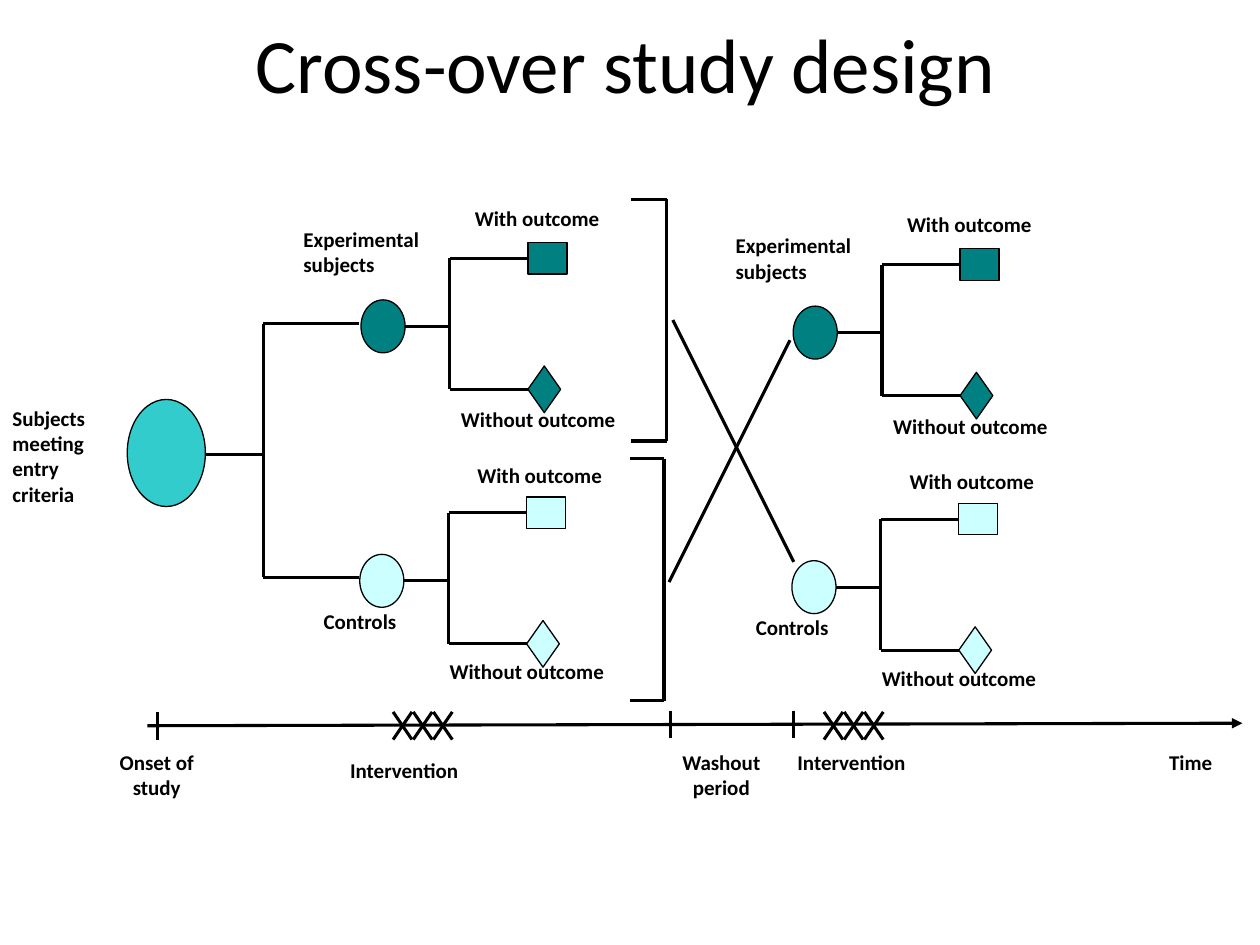
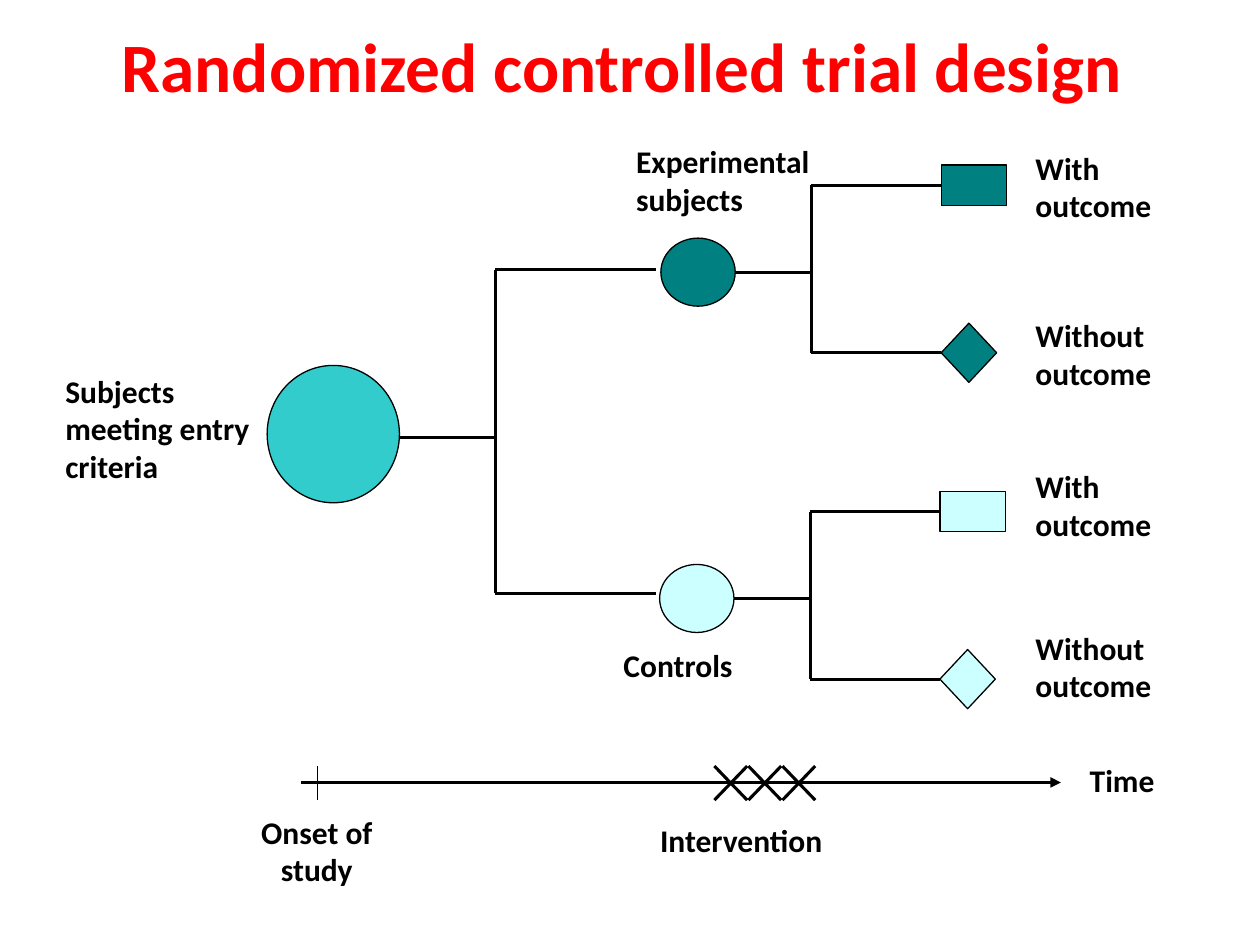
from dataclasses import dataclass

from lxml import etree
from pptx import Presentation
from pptx.dml.color import RGBColor
from pptx.enum.shapes import MSO_CONNECTOR, MSO_SHAPE
from pptx.enum.text import MSO_ANCHOR, MSO_AUTO_SIZE, PP_ALIGN
from pptx.oxml.ns import qn
from pptx.util import Inches, Pt


@dataclass(frozen=True)
class Theme:
    font: str = "Calibri"
    black: str = "000000"
    red: str = "FF0000"
    entry: str = "33CCCC"
    experimental: str = "008080"
    control: str = "CCFFFF"
    outline: float = 0.75
    rule: float = 1.75


THEME = Theme()

# Lengths are inches. Labels are (text, left, top, width, height).
# An arm is (fill, node centre x, node centre y).
CROSSOVER = {
    "title": ("Cross-over study design", (0.59, -0.17, 8.75, 1.33),
              dict(size=44)),
    "size": 12,
    "entry": (1.01, 3.17, 0.62, 0.85),
    "entry_fork": (2.09, 2.85, 3.61, (2.57, 4.58)),
    "arms": [(THEME.experimental, 3.04, 2.59), (THEME.control, 3.03, 4.61)],
    "arm_labels": [
        ("Experimental subjects", 2.31, 1.75, 1.37, 0.71),
        ("With outcome", 3.67, 1.58, 1.59, 0.44),
        ("Without outcome", 3.56, 3.18, 1.78, 0.48),
        ("Controls", 2.47, 4.78, 1.09, 0.71),
        ("With outcome", 3.69, 3.62, 1.52, 0.37),
        ("Without outcome", 3.47, 5.18, 1.73, 0.63),
    ],
    "phases": [(0, 0), (3.43, 0.05)],
    "node": (0.35, 0.42), "square": (0.31, 0.25), "diamond": (0.26, 0.37),
    "fork_dx": 0.53, "tip_dx": 1.15, "rise": 0.54, "drop": 0.5,
    "time_axis": (1.17, 5.76, 9.86, 5.74),
    "ticks": [(1.25, 5.65, THEME.rule), (5.32, 5.64, THEME.rule),
              (6.3, 5.64, THEME.rule)],
    "tick_height": 0.22,
    "interventions": [3.12, 6.54],
    "cross": (5.65, 0.15, 0.22, 0.16),
    "labels": [
        ("Subjects meeting entry criteria", 0, 3.17, 1.01, 1.07),
        ("Time", 9.18, 5.9, 0.82, 0.32),
        ("Intervention", 2.68, 5.96, 1.31, 0.43),
        ("Intervention", 6.23, 5.9, 1.31, 0.43),
    ],
    "centred_labels": [
        ("Onset of study", 0.78, 5.9, 0.93, 0.64),
        ("Washout\nperiod", 5.07, 5.9, 1.31, 0.64),
    ],
    "brackets": [(5.01, 5.29, 1.58, 3.5), (5, 5.27, 3.64, 5.56)],
    "swaps": [(5.34, 2.54, 6.3, 4.46), (5.31, 4.62, 6.27, 2.7)],
}

RANDOMIZED = {
    "title": ("Randomized controlled trial design ", (0.5, 0.13, 9, 0.77),
              dict(size=39.6, color=THEME.red, bold=True)),
    "size": 18,
    "entry": (2.12, 2.9, 1.05, 1.09),
    "entry_fork": (3.93, 5.21, 3.47, (2.14, 4.71)),
    "arms": [(THEME.experimental, 5.54, 2.16), (THEME.control, 5.53, 4.75)],
    "arm_labels": [
        ("Experimental subjects", 4.95, 1.08, 1.9, 0.91),
        ("With outcome", 8.12, 1.13, 1.4, 0.91),
        ("Without outcome", 8.12, 2.46, 1.53, 0.81),
        ("Controls", 4.85, 5.08, 1.84, 0.91),
        ("With outcome", 8.12, 3.66, 1.4, 0.91),
        ("Without outcome", 8.12, 4.94, 1.53, 0.81),
    ],
    "phases": [(0, 0)],
    "node": (0.59, 0.54), "square": (0.52, 0.32), "diamond": (0.44, 0.47),
    "fork_dx": 0.9, "tip_dx": 1.93, "rise": 0.69, "drop": 0.64,
    "time_axis": (2.39, 6.21, 8.42, 6.21),
    "ticks": [(2.52, 6.08, THEME.outline)],
    "tick_height": 0.27,
    "interventions": [5.67],
    "cross": (6.08, 0.26, 0.27, 0.27),
    "labels": [
        ("Subjects meeting entry criteria", 0.42, 2.9, 1.7, 1.36),
        ("Time", 8.55, 5.99, 1.05, 0.41),
        ("Intervention", 5.14, 6.47, 1.84, 0.55),
    ],
    "centred_labels": [("Onset of study", 1.73, 6.4, 1.57, 0.82)],
    "brackets": [],
    "swaps": [],
}


def write(tf, text, size, color=THEME.black, bold=False, align=PP_ALIGN.LEFT):
    tf.word_wrap = True
    tf.auto_size = MSO_AUTO_SIZE.NONE
    for i, content in enumerate(text.split("\n")):
        p = tf.paragraphs[0] if i == 0 else tf.add_paragraph()
        p.alignment = align
        r = p.add_run()
        r.text = content
        r.font.name = THEME.font
        r.font.size = Pt(size)
        r.font.bold = bold
        r.font.color.rgb = RGBColor.from_string(color)


def add_title(slide, text, box, style):
    sp = slide.shapes.title
    sp.left, sp.top, sp.width, sp.height = map(Inches, box)
    sp.text_frame.vertical_anchor = MSO_ANCHOR.MIDDLE
    write(sp.text_frame, text, align=PP_ALIGN.CENTER, **style)


def add_label(slide, label, size, align=PP_ALIGN.LEFT, dx=0, dy=0):
    text, x, y, w, h = label
    sp = slide.shapes.add_textbox(*map(Inches, (x + dx, y + dy, w, h)))
    write(sp.text_frame, text, size=size, bold=True, align=align)


def add_mark(slide, kind, x, y, w, h, fill):
    sp = slide.shapes.add_shape(kind, *map(Inches, (x, y, w, h)))
    sp.shadow.inherit = False
    sp.fill.solid()
    sp.fill.fore_color.rgb = RGBColor.from_string(fill)
    sp.line.color.rgb = RGBColor.from_string(THEME.black)
    sp.line.width = Pt(THEME.outline)
    return sp


def add_line(slide, x1, y1, x2, y2, width=THEME.rule, arrow=False):
    line = slide.shapes.add_connector(
        MSO_CONNECTOR.STRAIGHT, *map(Inches, (x1, y1, x2, y2)))
    line.line.color.rgb = RGBColor.from_string(THEME.black)
    line.line.width = Pt(width)
    if arrow:
        etree.SubElement(line.line._get_or_add_ln(), qn("a:tailEnd"),
                         type="triangle")
    etree.SubElement(line._element.spPr, qn("a:effectLst"))
    return line


def add_fork(slide, start_x, y, fork_x, tip_x, tip_ys):
    """Draw a stem, an upright and two branches; return the branches."""
    add_line(slide, start_x, y, fork_x, y)
    add_line(slide, fork_x, tip_ys[0], fork_x, tip_ys[1])
    return [add_line(slide, fork_x, tip_y, tip_x, tip_y) for tip_y in tip_ys]


def add_arm(slide, d, fill, cx, cy):
    """Draw one study group and its two outcomes around its node centre."""
    w, h = d["node"]
    add_mark(slide, MSO_SHAPE.OVAL, cx - w / 2, cy - h / 2, w, h, fill)
    tip_x = cx + d["tip_dx"]
    tip_ys = (cy - d["rise"], cy + d["drop"])
    branches = add_fork(slide, cx + w / 2, cy, cx + d["fork_dx"], tip_x, tip_ys)
    outcomes = ((MSO_SHAPE.RECTANGLE, d["square"]),
                (MSO_SHAPE.DIAMOND, d["diamond"]))
    for branch, y, (kind, (ow, oh)) in zip(branches, tip_ys, outcomes):
        outcome = add_mark(slide, kind, tip_x, y - oh / 2, ow, oh, fill)
        branch.end_connect(outcome, 1)


def add_timeline(slide, d):
    add_line(slide, *d["time_axis"], arrow=True)
    for x, y, width in d["ticks"]:
        add_line(slide, x, y, x, y + d["tick_height"], width=width)
    top, w, h, pitch = d["cross"]
    for start in d["interventions"]:
        for i in range(3):
            x = start + i * pitch
            add_line(slide, x, top, x + w, top + h)
            add_line(slide, x, top + h, x + w, top)


def add_bracket(slide, left, right, top, bottom):
    add_line(slide, right, top, right, bottom)
    for y in (top, bottom):
        add_line(slide, left, y, right, y)


def add_design(prs, d):
    slide = prs.slides.add_slide(prs.slide_layouts[5])
    add_title(slide, *d["title"])
    x, y, w, h = d["entry"]
    add_mark(slide, MSO_SHAPE.OVAL, x, y, w, h, THEME.entry)
    fork_x, tip_x, stem_y, tip_ys = d["entry_fork"]
    add_fork(slide, x + w, stem_y, fork_x, tip_x, tip_ys)
    for dx, dy in d["phases"]:
        for fill, cx, cy in d["arms"]:
            add_arm(slide, d, fill, cx + dx, cy + dy)
        for label in d["arm_labels"]:
            add_label(slide, label, d["size"], dx=dx, dy=dy)
    for bracket in d["brackets"]:
        add_bracket(slide, *bracket)
    for swap in d["swaps"]:
        add_line(slide, *swap)
    add_timeline(slide, d)
    for label in d["labels"]:
        add_label(slide, label, d["size"])
    for label in d["centred_labels"]:
        add_label(slide, label, d["size"], align=PP_ALIGN.CENTER)


def main():
    prs = Presentation()
    prs.slide_width, prs.slide_height = Inches(10), Inches(7.5)
    for design in (CROSSOVER, RANDOMIZED):
        add_design(prs, design)
    prs.save("out.pptx")


if __name__ == "__main__":
    main()
